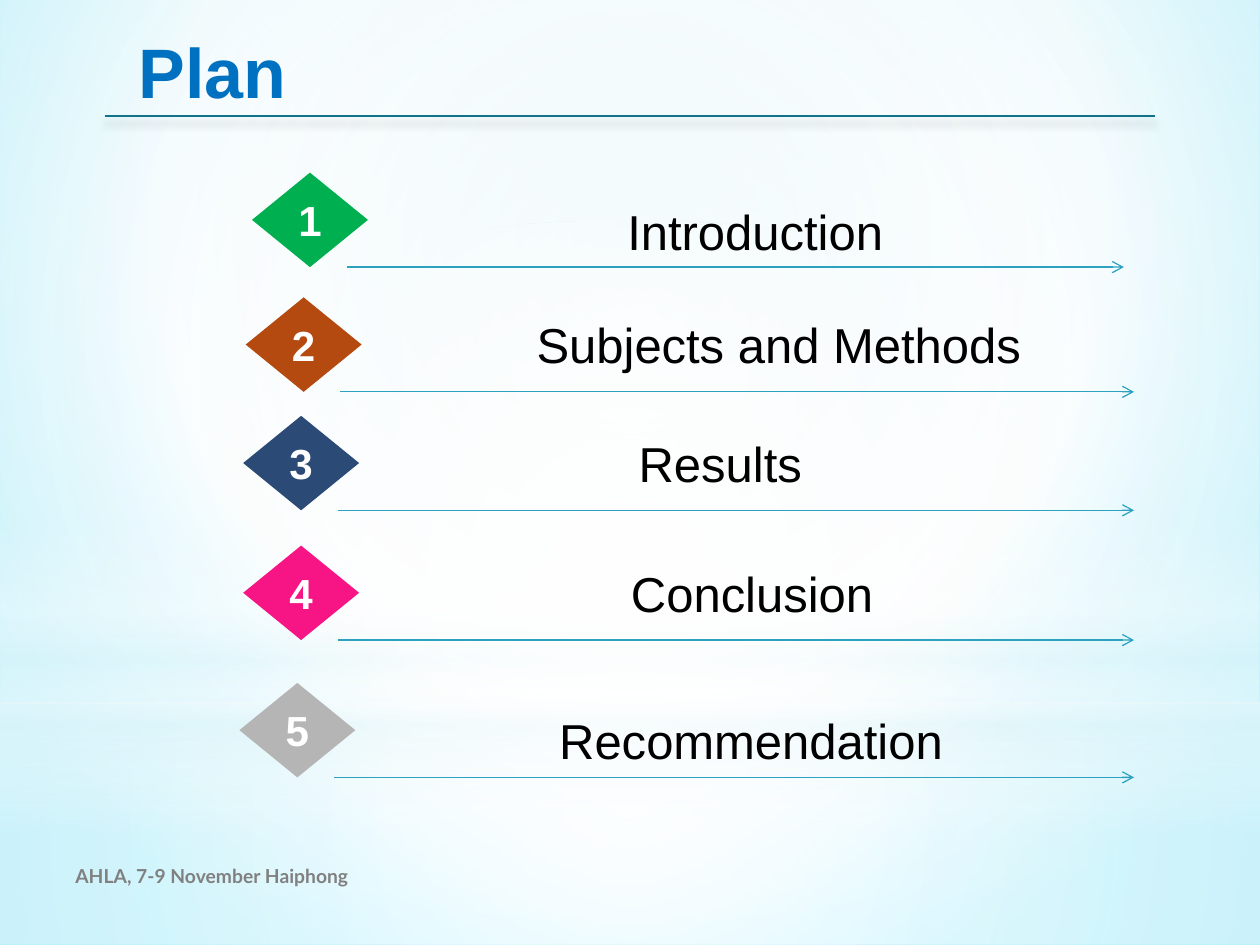
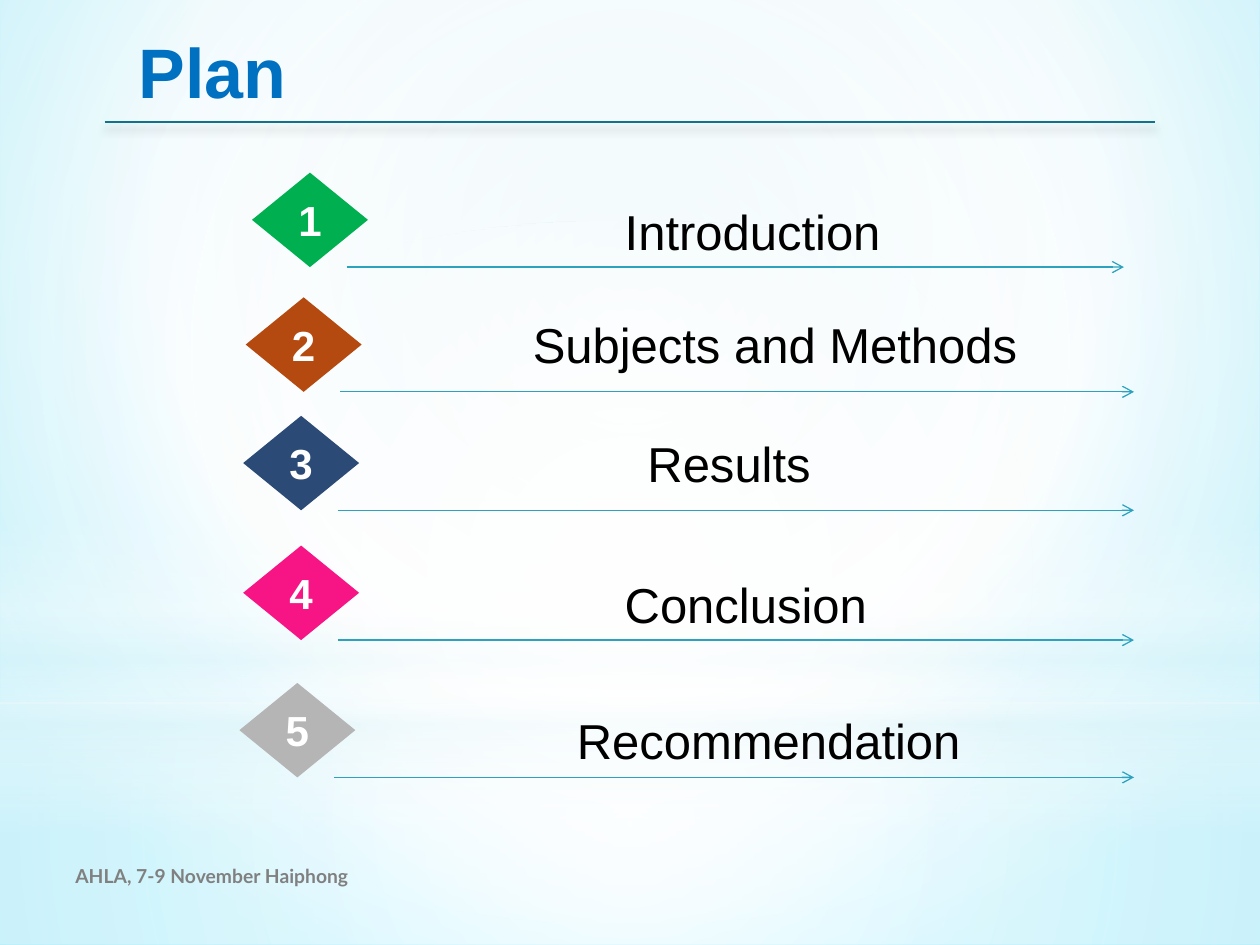
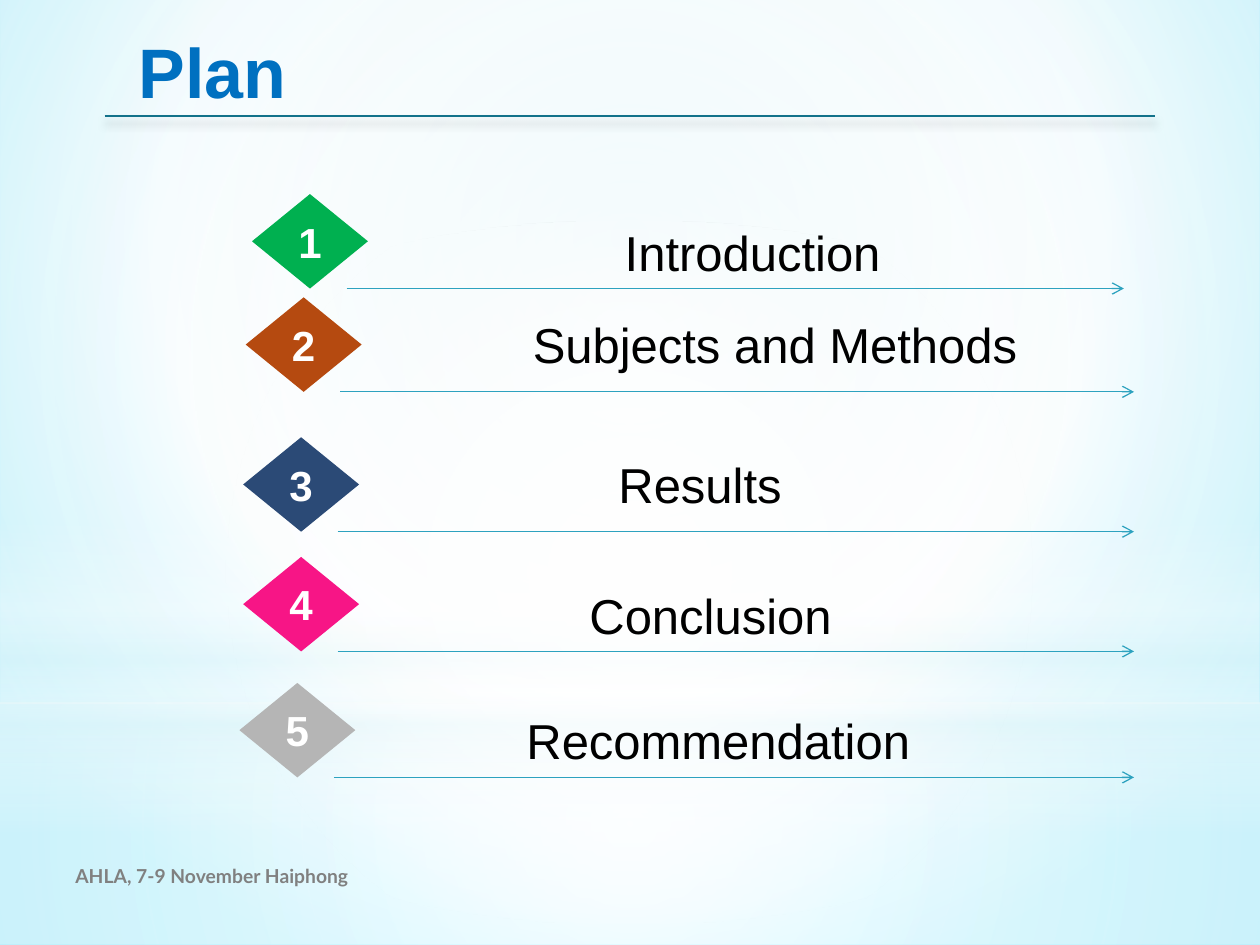
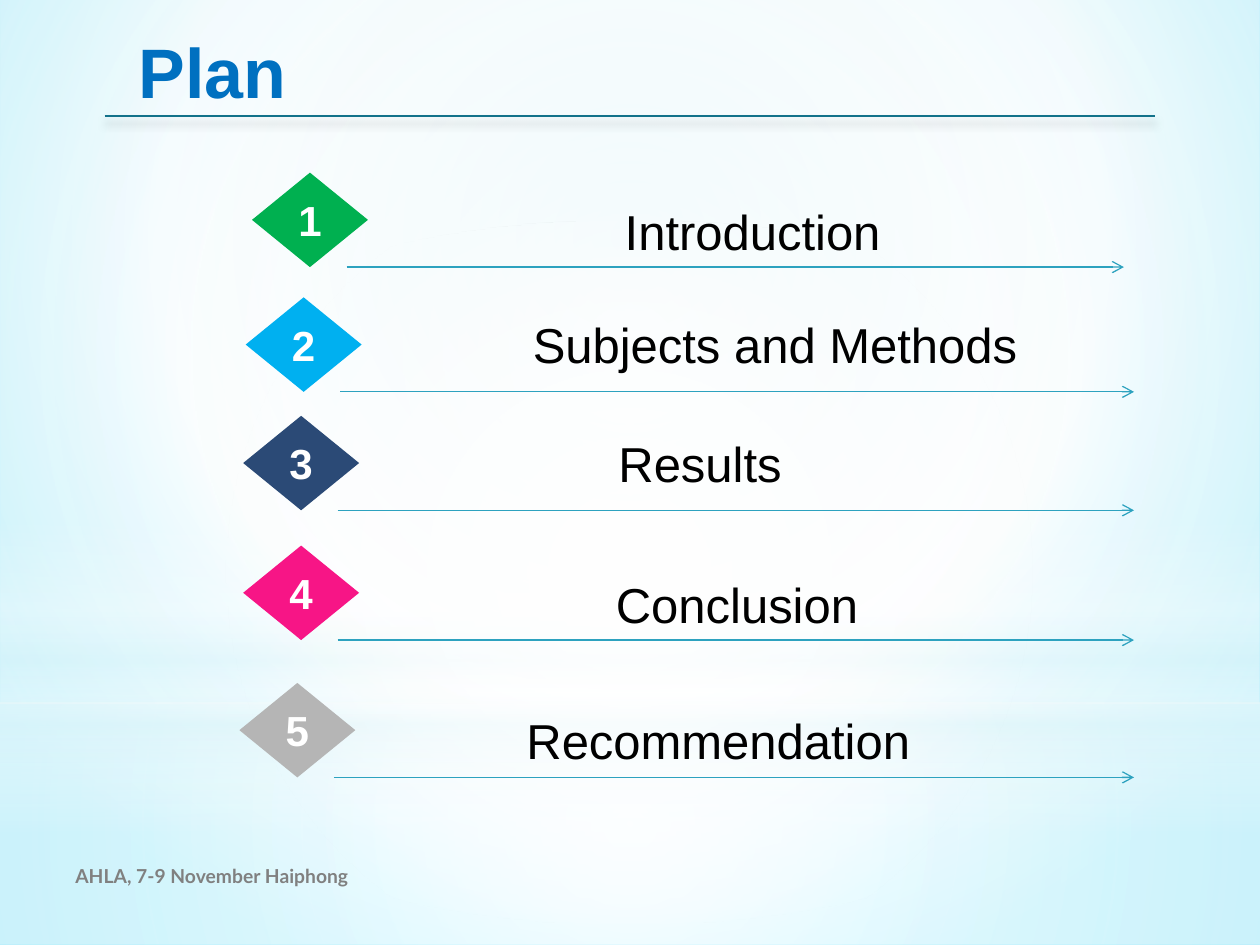
from lxml.etree import SubElement
from pptx import Presentation
from pptx.dml.color import RGBColor
from pptx.enum.shapes import MSO_CONNECTOR, MSO_SHAPE
from pptx.enum.text import MSO_ANCHOR, MSO_AUTO_SIZE, PP_ALIGN
from pptx.oxml.ns import qn
from pptx.util import Inches, Pt

WHITE = RGBColor(0xFF, 0xFF, 0xFF)
BLACK = RGBColor(0, 0, 0)
PALE = RGBColor(0xDE, 0xF5, 0xFA)
MIST = RGBColor(0xCD, 0xEF, 0xF7)
AQUA = RGBColor(0x7C, 0xE7, 0xFF)
BLUE = RGBColor(0x00, 0x70, 0xC0)
TEAL = RGBColor(0x12, 0x72, 0x8A)
CYAN = RGBColor(0x2D, 0xA2, 0xBF)
GREY = RGBColor(0x80, 0x80, 0x80)
GREEN = RGBColor(0x00, 0xB0, 0x50)
RUST = RGBColor(0xB5, 0x4A, 0x10)
SKY = RGBColor(0x00, 0xB0, 0xF0)
NAVY = RGBColor(0x2B, 0x4A, 0x76)
PINK = RGBColor(0xF7, 0x15, 0x86)
SILVER = RGBColor(0xB5, 0xB5, 0xB5)

TITLE = "Plan"
FOOTER = "AHLA, 7-9 November Haiphong"
GEM_W, GEM_H = 0.92, 0.75

# name, diamond left, arrow end, label width
ITEMS = [
    ("Introduction", 2, 8.92, 2.32),
    ("Subjects and Methods", 1.95, 9, 4.09),
    ("Results", 1.93, 9, 1.62),
    ("Conclusion", 1.93, 9, 2.26),
    ("Recommendation", 1.9, 9, 3.4),
]
TOPS = [1.37, 2.36, 3.3, 4.33, 5.42]
DROPS = [0.18, 0.09, 0.09, 0.18, 0.17]
HUES = [GREEN, RUST, NAVY, PINK, SILVER]

PLANS = [
    {"lefts": [4.88, 4.16, 4.97, 4.91, 4.34],
     "drops": [0.18, 0.09, 0.09, 0.09, 0.17]},
    {"lefts": [4.86, 4.13, 5.04, 4.86, 4.48], "rule": 0.97},
    {"lefts": [4.86, 4.13, 4.81, 4.58, 4.08],
     "tops": [1.54, 2.36, 3.47, 4.42, 5.42]},
    {"lefts": [4.86, 4.13, 4.81, 4.79, 4.08],
     "hues": [GREEN, SKY, NAVY, PINK, SILVER]},
]

MIDDLE = (50, 50, 50, 50)
BACK = [(0, MIST, 100), (60, WHITE, 100), (100, AQUA, 100)]
GLOWS = [
    (MSO_SHAPE.RECTANGLE, 5.58, 1.92, MIDDLE,
     [(0, WHITE, 91), (37, WHITE, 76), (100, PALE, 79)]),
    (MSO_SHAPE.RECTANGLE, 0, 5.58, MIDDLE,
     [(0, WHITE, 89), (48, WHITE, 62), (100, PALE, 79)]),
    (MSO_SHAPE.RECTANGLE, 4.12, 2.5, None,
     [(0, WHITE, 0), (29, WHITE, 30), (45, PALE, 40),
      (55, WHITE, 26), (65, PALE, 60), (100, WHITE, 0)]),
    (MSO_SHAPE.OVAL, 1.75, 5.58, MIDDLE,
     [(0, WHITE, 100), (56, WHITE, 0)]),
]


def box(*sizes):
    return [Inches(size) for size in sizes]


def add(node, tag, **attrs):
    return SubElement(node, qn(tag), {k: str(v) for k, v in attrs.items()})


def tint(node, color, alpha):
    hue = add(node, "a:srgbClr", val=color)
    if alpha < 100:
        add(hue, "a:alpha", val=alpha * 1000)


def shade(fill, root, stops, focus):
    fill.gradient()
    grad = root.find(".//" + qn("a:gradFill"))
    for child in list(grad):
        grad.remove(child)
    group = add(grad, "a:gsLst")
    for place, color, alpha in stops:
        tint(add(group, "a:gs", pos=place * 1000), color, alpha)
    if focus:
        route = add(grad, "a:path", path="circle")
        sides = {side: part * 1000 for side, part in zip("ltrb", focus)}
        add(route, "a:fillToRect", **sides)
    else:
        add(grad, "a:lin", ang=90 * 60000, scaled=0)


def style(frame, text, size, color, bold=False, face="Arial",
          align=PP_ALIGN.LEFT, anchor=MSO_ANCHOR.TOP, wrap=False):
    frame.text = text
    frame.word_wrap = wrap
    frame.vertical_anchor = anchor
    para = frame.paragraphs[0]
    para.alignment = align
    font = para.font
    font.name, font.size, font.bold = face, Pt(size), bold
    font.color.rgb = color


def draw_line(shapes, start, end, color, width):
    line = shapes.add_connector(MSO_CONNECTOR.STRAIGHT, *box(*start, *end))
    line.line.color.rgb = color
    line.line.width = Pt(width)
    return line, add(line._element.spPr, "a:effectLst")


def paint_master(deck, slide):
    master = deck.slide_master
    shade(master.background.fill, master._element, BACK, (20, 10, 20, 60))
    first = master.shapes[0]._element
    for index, (kind, top, height, focus, stops) in enumerate(GLOWS):
        glow = slide.shapes.add_shape(kind, *box(0, top, 10, height))
        glow.shadow.inherit = False
        glow.line.fill.background()
        shade(glow.fill, glow._element, stops, focus)
        glow._element.nvSpPr.cNvPr.set("id", str(100 + index))
        first.addprevious(glow._element)


def add_frame(slide, rule):
    _, effect = draw_line(slide.shapes, (0.83, rule), (9.17, rule), TEAL, 1.25)
    shadow = add(effect, "a:outerShdw", blurRad=Pt(5), dist=Pt(4),
                 dir=90 * 60000, rotWithShape=0)
    tint(shadow, BLACK, 20)
    title = slide.shapes.title
    title.left, title.top, title.width, title.height = box(1, 0.18, 1.54, 0.77)
    style(title.text_frame, TITLE, 40, BLUE, bold=True)
    title.text_frame.auto_size = MSO_AUTO_SIZE.SHAPE_TO_FIT_TEXT
    footer = slide.shapes.add_textbox(*box(0.5, 6.75, 3.67, 0.4))
    style(footer.text_frame, FOOTER, 11, GREY, bold=True, face="Lato",
          anchor=MSO_ANCHOR.MIDDLE, wrap=True)


def add_item(slide, number, item, top, left, drop, hue):
    name, edge, end, width = item
    shapes = slide.shapes.add_group_shape().shapes
    gem = shapes.add_shape(MSO_SHAPE.DIAMOND, *box(edge, top, GEM_W, GEM_H))
    gem.shadow.inherit = False
    gem.fill.solid()
    gem.fill.fore_color.rgb = hue
    gem.line.fill.background()
    style(gem.text_frame, str(number), 24, WHITE, bold=True,
          align=PP_ALIGN.CENTER, anchor=MSO_ANCHOR.MIDDLE, wrap=True)
    base = top + GEM_H
    arrow, _ = draw_line(shapes, (edge + 0.75, base), (end, base), CYAN, 0.75)
    add(arrow.line._get_or_add_ln(), "a:tailEnd", type="arrow")
    label = shapes.add_textbox(*box(left, top + drop, width, 0.57))
    style(label.text_frame, name, 28, BLACK)
    label.text_frame.auto_size = MSO_AUTO_SIZE.SHAPE_TO_FIT_TEXT


def main():
    deck = Presentation()
    deck.slide_width, deck.slide_height = box(10, 7.5)
    for index, plan in enumerate(PLANS):
        slide = deck.slides.add_slide(deck.slide_layouts[5])
        if index == 0:
            paint_master(deck, slide)
        add_frame(slide, plan.get("rule", 0.92))
        rows = zip(ITEMS, plan.get("tops", TOPS), plan["lefts"],
                   plan.get("drops", DROPS), plan.get("hues", HUES))
        for number, row in enumerate(rows, 1):
            add_item(slide, number, *row)
    deck.save("out.pptx")


if __name__ == "__main__":
    main()
